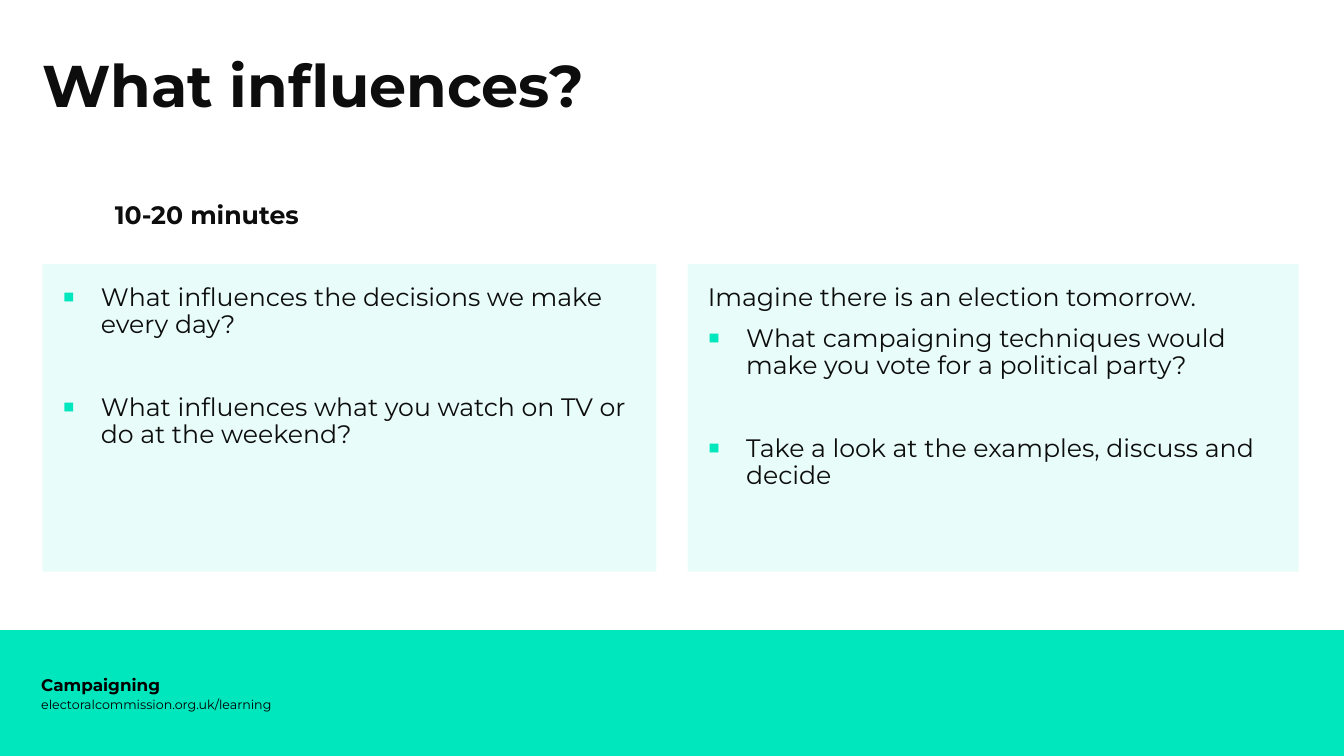
from lxml import etree
from pptx import Presentation
from pptx.dml.color import RGBColor
from pptx.enum import shapes, text
from pptx.oxml import ns
from pptx.util import Inches, Pt

# Content
FONT = "Montserrat"
GREEN, INK, BLACK = "00E7BD", "0D0D0D", "000000"

# wording, (left, top, width, height), size, bold, colour, line spacing, anchor
TOP, MIDDLE = text.MSO_ANCHOR.TOP, text.MSO_ANCHOR.MIDDLE
LABELS = [
    ("electoralcommission.org.uk/learning", (0.31, 6.79, 7.65, 0.4), 9, False, BLACK, 1.0, MIDDLE),
    ("What influences?", (0.32, 0.51, 8.41, 1.2), 42, True, INK, 0.9, TOP),
    ("10-20 minutes", (1.04, 1.99, 6.19, 0.35), 18, True, INK, 0.8, TOP),
    ("Campaigning", (0.31, 6.59, 7.65, 0.4), 12, True, BLACK, 1.0, MIDDLE),
]

# (wording, bulleted, space before in points)
QUESTION_GAP = 39.75
PANELS = [
    ((0.42, 2.62, 6.09, 3.05), [
        ("What influences the decisions we make every day?", True, 0),
        ("What influences what you watch on TV or do at the weekend?", True, QUESTION_GAP),
    ]),
    ((6.82, 2.62, 6.06, 3.05), [
        ("Imagine there is an election tomorrow.", False, 0),
        ("What campaigning techniques would make you vote for a political party?", True, 10),
        ("Take a look at the examples, discuss and decide", True, QUESTION_GAP),
    ]),
]

prs = Presentation()
prs.slide_width, prs.slide_height = Inches(13.33), Inches(7.5)
slide = prs.slides.add_slide(prs.slide_layouts[6])


def rgb(colour):
    return RGBColor.from_string(colour)


def add_panel(box, opacity=100):
    panel = slide.shapes.add_shape(shapes.MSO_SHAPE.RECTANGLE, *map(Inches, box))
    panel.shadow.inherit = False
    panel.line.fill.background()
    panel.fill.solid()
    panel.fill.fore_color.rgb = rgb(GREEN)
    if opacity < 100:
        tint = panel._element.spPr.find(".//" + ns.qn("a:srgbClr"))
        etree.SubElement(tint, ns.qn("a:alpha"), val=str(opacity * 1000))
    return panel


def add_bullet(paragraph):
    props = paragraph._p.get_or_add_pPr()
    props.set("marL", str(Inches(0.38)))
    props.set("indent", str(-Inches(0.38)))
    colour = etree.SubElement(props, ns.qn("a:buClr"))
    etree.SubElement(colour, ns.qn("a:srgbClr"), val=GREEN)
    etree.SubElement(props, ns.qn("a:buSzPct"), val="140000")
    etree.SubElement(props, ns.qn("a:buFont"), typeface="Arial")
    etree.SubElement(props, ns.qn("a:buChar"), char="▪")


def style(paragraph, size, bold, colour, spacing):
    paragraph.alignment = text.PP_ALIGN.LEFT
    paragraph.line_spacing = spacing
    for run in paragraph.runs:
        run.font.name = FONT
        run.font.size = Pt(size)
        run.font.bold = bold
        run.font.color.rgb = rgb(colour)


# Footer band
add_panel((0, 6.25, 13.33, 1.25))

# Title, timing and footer text
for wording, box, size, bold, colour, spacing, anchor in LABELS:
    frame = slide.shapes.add_textbox(*map(Inches, box)).text_frame
    frame.word_wrap = True
    frame.vertical_anchor = anchor
    frame.text = wording
    style(frame.paragraphs[0], size, bold, colour, spacing)

# Question panels
for box, lines in PANELS:
    frame = add_panel(box, opacity=9).text_frame
    frame.word_wrap = True
    frame.vertical_anchor = TOP
    frame.margin_left = frame.margin_right = Inches(0.2)
    frame.margin_top = frame.margin_bottom = Inches(0.2)
    for i, (wording, bulleted, gap) in enumerate(lines):
        paragraph = frame.add_paragraph() if i else frame.paragraphs[0]
        paragraph.text = wording
        if bulleted:
            add_bullet(paragraph)
        paragraph.space_before = Pt(gap)
        style(paragraph, 18, False, INK, 0.9)

prs.save("out.pptx")
